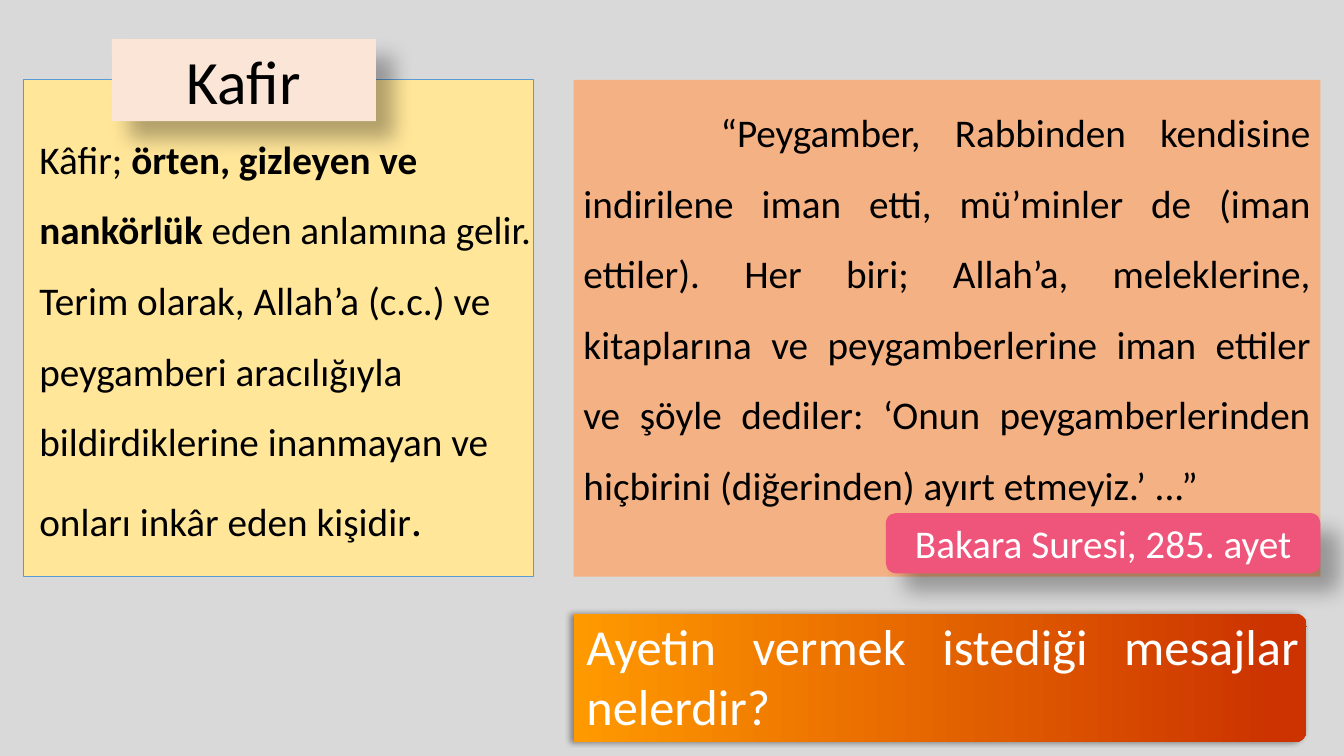
from dataclasses import dataclass
from lxml.etree import SubElement as Sub
from pptx import Presentation
from pptx.dml.color import RGBColor as Rgb
from pptx.enum.shapes import MSO_SHAPE as Kind
from pptx.enum.text import MSO_ANCHOR as Anchor, PP_ALIGN as Align
from pptx.oxml.ns import qn
from pptx.util import Pt


@dataclass(frozen=True)
class Theme:
    face: str = "Calibri"
    back: str = "D9D9D9"
    dark: str = "000000"
    light: str = "FFFFFF"
    cream: str = "FFE699"
    edge: str = "5B9BD5"
    peach: str = "FBE5D6"
    verse: str = "F4B183"
    pink: str = "EF557B"
    glow: tuple = ("FF9900", "CC3300")
    body: int = 28
    stop: int = 32
    ask: int = 36
    head: int = 44


def apply(item, values):
    for name, value in values.items():
        setattr(item, name, value)


class Page:
    def __init__(self, deck, theme):
        self.theme = theme
        self.slide = deck.slides.add_slide(deck.slide_layouts[6])
        fill = self.slide.background.fill
        fill.solid()
        fill.fore_color.rgb = Rgb.from_string(theme.back)

    def panel(self, box, color, edge=None, kind=Kind.RECTANGLE):
        shape = self.slide.shapes.add_shape(kind, *map(Pt, box))
        shape.shadow.inherit = False
        shape.fill.solid()
        shape.fill.fore_color.rgb = Rgb.from_string(color)
        if edge:
            shape.line.color.rgb = Rgb.from_string(edge)
            shape.line.width = Pt(1)
        else:
            shape.line.fill.background()
        return shape

    def banner(self, box, colors):
        """Draw a bar rounded on its right end, shaded from left to right."""
        left, top, width, height = box
        shift = (width - height) / 2
        shape = self.panel((left + shift, top - shift, height, width),
                           colors[0], kind=Kind.ROUND_2_SAME_RECTANGLE)
        shape.rotation = 90
        shape.adjustments[0] = 0.1
        shape.fill.gradient()
        shape.fill.gradient_angle = 90
        for stop, color, place in zip(shape.fill.gradient_stops, colors, (0, 0.96)):
            stop.color.rgb = Rgb.from_string(color)
            stop.position = place
        return shape

    def label(self, box):
        return self.slide.shapes.add_textbox(*map(Pt, box))

    def shade(self, shape, alpha=30, blur=15, dist=18, angle=45):
        effects = shape._element.spPr.find(qn("a:effectLst"))
        outer = Sub(effects, qn("a:outerShdw"), blurRad=str(Pt(blur)),
                    dist=str(Pt(dist)), dir=str(angle * 60000),
                    algn="ctr", rotWithShape="0")
        color = Sub(outer, qn("a:srgbClr"), val=self.theme.dark)
        Sub(color, qn("a:alpha"), val=str(alpha * 1000))

    def fill_text(self, shape, runs, color, frame=None, para=None, margin=0, indent=0):
        """Fill a shape with one paragraph of (text, size, bold) runs."""
        text = shape.text_frame
        apply(text, {"word_wrap": True, **(frame or {})})
        line = text.paragraphs[0]
        apply(line, {"alignment": Align.LEFT, **(para or {})})
        props = line._p.get_or_add_pPr()
        props.set("marL", str(Pt(margin)))
        props.set("indent", str(Pt(indent)))
        for words, size, bold in runs:
            run = line.add_run()
            run.text = words
            apply(run.font, {"name": self.theme.face, "size": Pt(size), "bold": bold})
            run.font.color.rgb = Rgb.from_string(color)


def main():
    deck = Presentation()
    apply(deck, {"slide_width": Pt(960), "slide_height": Pt(540)})
    theme = Theme()
    page = Page(deck, theme)
    middle = {"vertical_anchor": Anchor.MIDDLE}
    center = {"alignment": Align.CENTER}
    flush = dict.fromkeys(
        ("margin_left", "margin_top", "margin_right", "margin_bottom"), 0)

    term = page.panel((16.6, 57, 364.4, 355), theme.cream, theme.edge)
    page.fill_text(term, [
        ("Kâfir; ", theme.body, False),
        ("örten, gizleyen ve nankörlük ", theme.body, True),
        ("eden anlamına gelir. Terim olarak, Allah’a (c.c.) ve peygamberi "
         "aracılığıyla bildirdiklerine inanmayan ve onları inkâr eden kişidir",
         theme.body, False),
        (".", theme.stop, False),
    ], theme.dark, middle | flush, {"line_spacing": 1.5}, margin=11.5)

    title = page.panel((80, 28, 188.5, 58.5), theme.peach)
    page.shade(title)
    page.fill_text(title, [("Kafir", theme.head, False)], theme.dark, middle, center)

    verse = page.panel((409.7, 57, 533.5, 355), theme.verse)
    page.fill_text(verse, [
        ("“Peygamber, Rabbinden kendisine indirilene iman etti, mü’minler de "
         "(iman ettiler). Her biri; Allah’a, meleklerine, kitaplarına ve "
         "peygamberlerine iman ettiler ve şöyle dediler: ‘Onun "
         "peygamberlerinden hiçbirini (diğerinden) ayırt etmeyiz.’ ...”",
         theme.body, False),
    ], theme.dark, {"vertical_anchor": Anchor.TOP},
        {"alignment": Align.JUSTIFY, "line_spacing": 1.5}, indent=98)

    source = page.panel((632.8, 366.5, 310.4, 43), theme.pink,
                        kind=Kind.ROUNDED_RECTANGLE)
    page.shade(source)
    page.fill_text(source, [("Bakara Suresi, 285. ayet", theme.body, False)],
                   theme.light, middle, center)

    bar = page.banner((410, 438.3, 523.4, 92), theme.glow)
    page.shade(bar, alpha=40, blur=4, dist=3, angle=180)
    ask = page.label((411.8, 435.6, 523.4, 94.3))
    page.fill_text(ask, [("Ayetin vermek istediği mesajlar nelerdir?", theme.ask, False)],
                   theme.light, para={"alignment": Align.JUSTIFY})

    deck.save("out.pptx")


if __name__ == "__main__":
    main()
